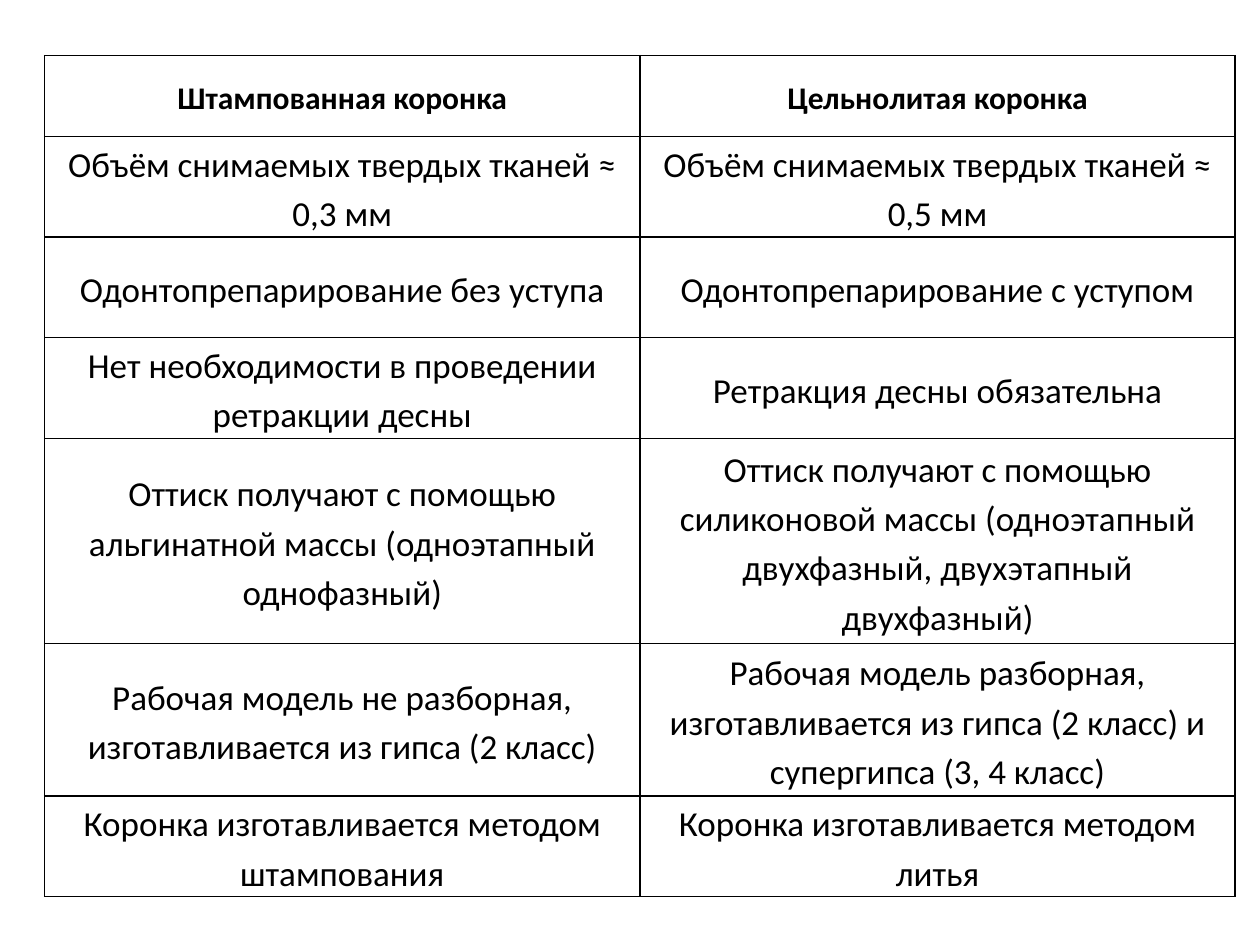
from dataclasses import dataclass

from lxml import etree
from pptx import Presentation
from pptx.dml.color import RGBColor
from pptx.enum import text
from pptx.oxml import ns
from pptx.table import _Cell
from pptx.util import Cm, Pt

COLORS = {"ink": "000000", "paper": "FFFFFF"}
FONT = "Calibri"


@dataclass
class Row:
    stamped: str
    cast: str
    height: float = 2.03
    size: int = 20
    bold: bool = False


ROWS = [
    Row("Штампованная коронка", "Цельнолитая коронка", height=1.63, size=18, bold=True),
    Row("Объём снимаемых твердых тканей ≈ 0,3 мм",
        "Объём снимаемых твердых тканей ≈ 0,5 мм"),
    Row("Одонтопрепарирование без уступа", "Одонтопрепарирование с уступом"),
    Row("Нет необходимости в проведении ретракции десны",
        "Ретракция десны обязательна"),
    Row("Оттиск получают с помощью альгинатной массы (одноэтапный однофазный)",
        "Оттиск получают с помощью силиконовой массы "
        "(одноэтапный двухфазный, двухэтапный двухфазный)", height=4.14),
    Row("Рабочая модель не разборная, изготавливается из гипса (2 класс)",
        "Рабочая модель разборная, изготавливается из гипса (2 класс) "
        "и супергипса (3, 4 класс)", height=3.07),
    Row("Коронка изготавливается методом штампования",
        "Коронка изготавливается методом литья"),
]


def set_borders(cell: _Cell, color: str, width: float = 1) -> None:
    """Draw all four cell edges; they must precede the fill in tcPr."""
    tc_pr = cell._tc.get_or_add_tcPr()
    for i, edge in enumerate(("lnL", "lnR", "lnT", "lnB")):
        ln = etree.Element(ns.qn(f"a:{edge}"), w=str(Pt(width)))
        fill = etree.SubElement(ln, ns.qn("a:solidFill"))
        etree.SubElement(fill, ns.qn("a:srgbClr"), val=color)
        tc_pr.insert(i, ln)


def write_cell(cell: _Cell, words: str, *, size: int, bold: bool) -> None:
    cell.fill.solid()
    cell.fill.fore_color.rgb = RGBColor.from_string(COLORS["paper"])
    set_borders(cell, COLORS["ink"])
    cell.margin_left = cell.margin_right = Cm(0.18)
    cell.margin_top = cell.margin_bottom = 0
    cell.vertical_anchor = text.MSO_ANCHOR.MIDDLE
    p = cell.text_frame.paragraphs[0]
    p.alignment = text.PP_ALIGN.CENTER
    p.line_spacing = 1.15
    r = p.add_run()
    r.text = words
    r.font.name = FONT
    r.font.size = Pt(size)
    r.font.bold = bold
    r.font.color.rgb = RGBColor.from_string(COLORS["ink"])


def main() -> None:
    prs = Presentation()
    prs.slide_width, prs.slide_height = Cm(25.4), Cm(19.05)
    s = prs.slides.add_slide(prs.slide_layouts[6])
    total = sum(row.height for row in ROWS)
    table = s.shapes.add_table(len(ROWS), 2, Cm(0.9), Cm(1.12), Cm(24), Cm(total)).table
    for row, line in zip(ROWS, table.rows):
        line.height = Cm(row.height)
        for cell, words in zip(line.cells, (row.stamped, row.cast)):
            write_cell(cell, words, size=row.size, bold=row.bold)
    prs.save("out.pptx")


if __name__ == "__main__":
    main()
